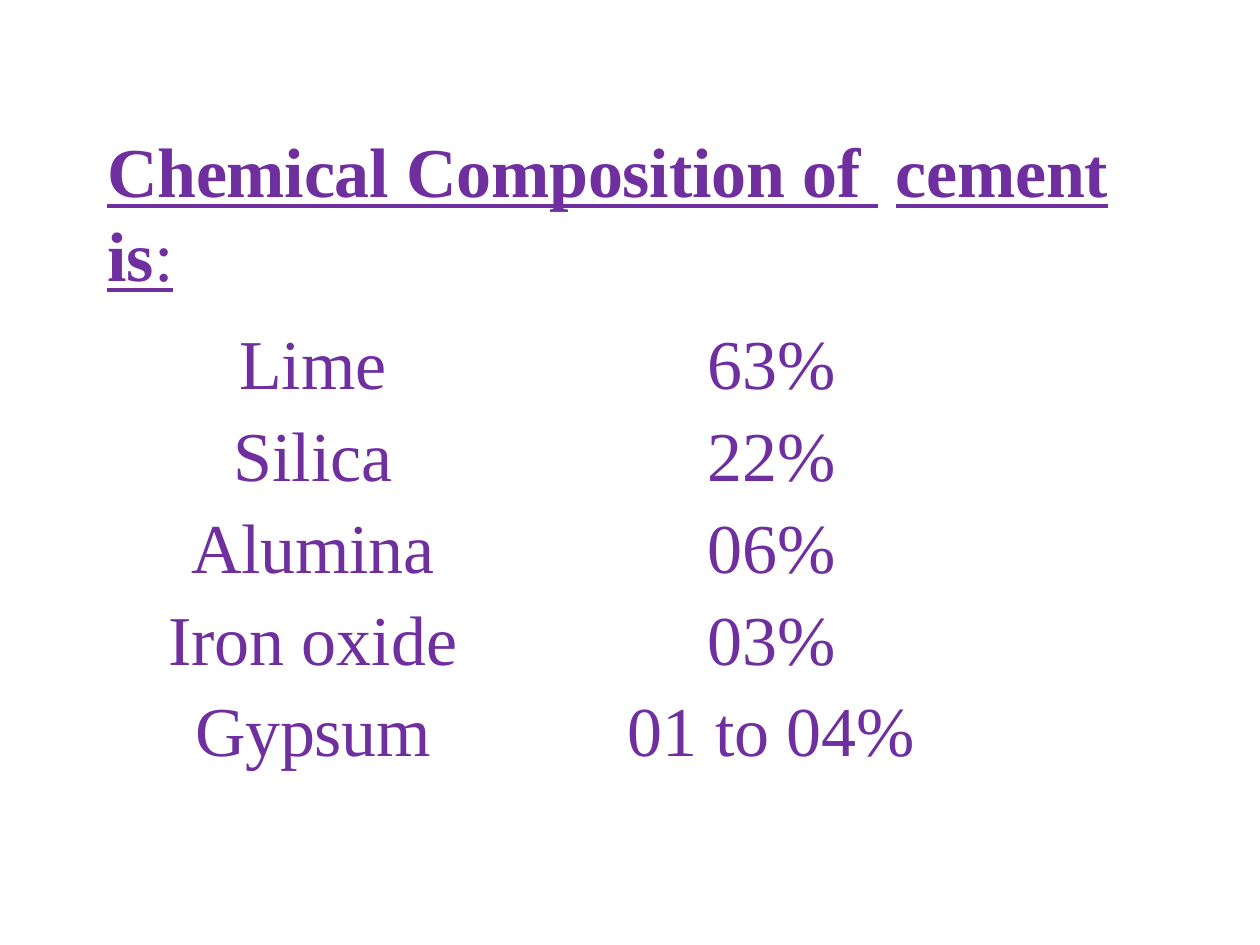
from pptx import Presentation
from pptx.dml.color import RGBColor
from pptx.enum.text import MSO_ANCHOR, MSO_AUTO_SIZE, PP_ALIGN
from pptx.util import Emu, Pt

COLORS = {"purple": "6F2F9F"}
FONT = "Times New Roman"


def px(length):
    return Emu(round(length * 914400 / 126))


def add_span(para, text, spacing=0, bold=False, underline=False):
    """Add a run; spacing is in hundredths of a point."""
    span = para.add_run()
    span.text = text
    span.font.name = FONT
    span.font.size = Pt(40)
    span.font.bold = bold
    span.font.underline = underline
    span.font.color.rgb = RGBColor.from_string(COLORS["purple"])
    span.font._element.set("spc", str(spacing))


deck = Presentation()
deck.slide_width, deck.slide_height = px(1260), px(945)
page = deck.slides.add_slide(deck.slide_layouts[5])

# Title
title = page.shapes.title
title.left, title.top, title.width, title.height = px(106), px(127), px(1050), px(171)
frame = title.text_frame
frame.word_wrap = True
frame.auto_size = MSO_AUTO_SIZE.SHAPE_TO_FIT_TEXT
frame.vertical_anchor = MSO_ANCHOR.TOP
frame.margin_left = frame.margin_right = frame.margin_bottom = 0
frame.margin_top = px(1)
para = frame.paragraphs[0]
para.alignment = PP_ALIGN.LEFT
para.space_before = Pt(1)
para._p.get_or_add_pPr().set("marL", str(px(1)))
for text, spacing, bold, underline in [
    ("Chemical Composition ", -10, True, True),
    ("of ", 0, True, True),
    (" ", 0, True, False),
    ("cement ", -10, True, True),
    ("is", 10, True, True),
    (":", 10, False, True),
]:
    add_span(para, text, spacing, bold, underline)

# Composition table: row height, line spacing, ingredient runs, share runs
ROWS = [
    (88, 48, [("Lime", -10)], [("63%", 0)]),
    (92, 50, [("Silica", -10)], [("22%", 0)]),
    (92, 50, [("Alumina", -10)], [("06%", 0)]),
    (92, 50, [("Iron ", -10), ("oxide", 0)], [("03%", 0)]),
    (90, 49.8, [("Gypsum", -10)], [("01 ", 0), ("to ", -10), ("04%", 0)]),
]
COLUMN_WIDTHS = [416, 413]
INDENTS = [4, 92]

table = page.shapes.add_table(
    len(ROWS), len(COLUMN_WIDTHS), px(103), px(321),
    px(sum(COLUMN_WIDTHS)), px(sum(row[0] for row in ROWS)),
).table
table.first_row = table.horz_banding = False
for column, width in zip(table.columns, COLUMN_WIDTHS):
    column.width = px(width)

for row, (height, line_spacing, *cell_texts) in zip(table.rows, ROWS):
    row.height = px(height)
    for cell, spans, indent in zip(row.cells, cell_texts, INDENTS):
        cell.fill.background()
        cell.margin_left = cell.margin_right = 0
        cell.margin_top = cell.margin_bottom = 0
        para = cell.text_frame.paragraphs[0]
        para.alignment = PP_ALIGN.CENTER
        para.line_spacing = Pt(line_spacing)
        para._p.get_or_add_pPr().set("marL", str(px(indent)))
        for text, spacing in spans:
            add_span(para, text, spacing)

deck.save("out.pptx")
